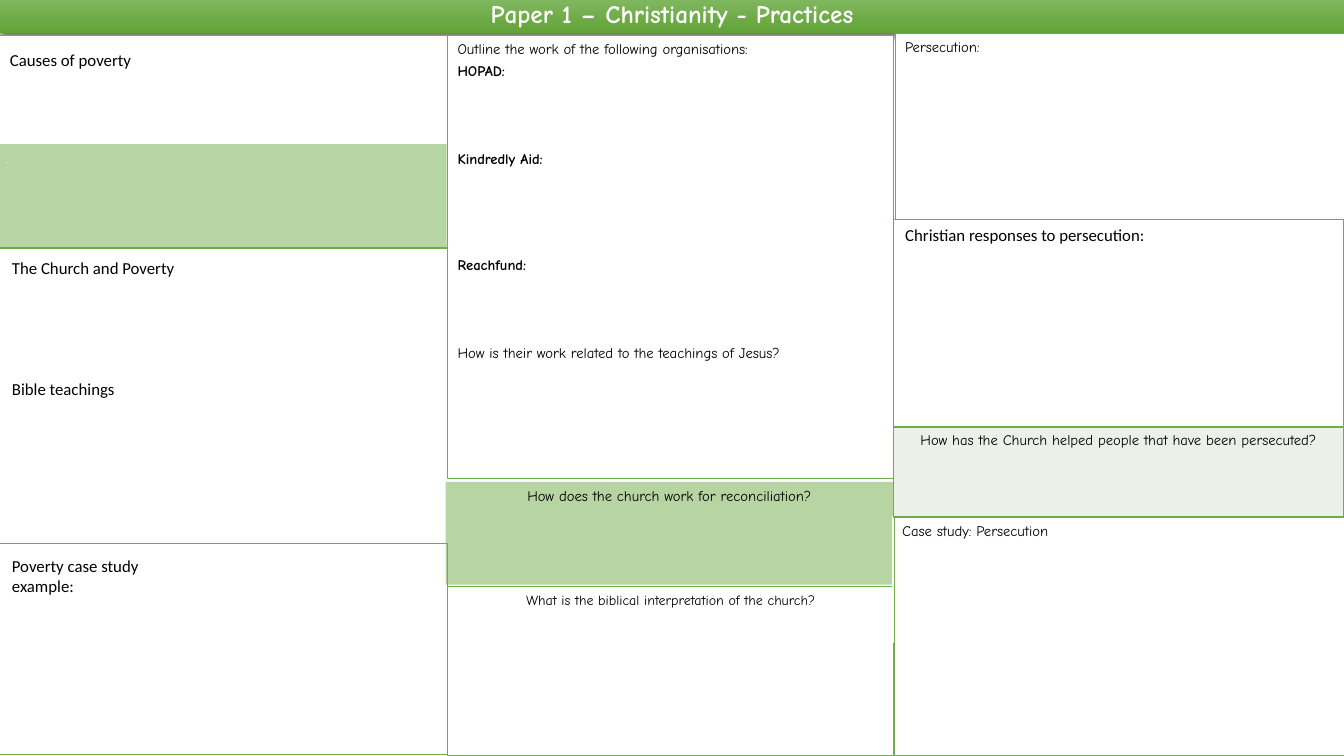
from lxml.etree import SubElement
from pptx import Presentation
from pptx.dml.color import RGBColor
from pptx.enum.shapes import MSO_SHAPE
from pptx.enum.text import MSO_ANCHOR, MSO_AUTO_SIZE, PP_ALIGN
from pptx.oxml import parse_xml
from pptx.oxml.ns import nsdecls, qn
from pptx.util import Inches, Pt

GREEN, WHITE, BLACK, PALE = "70AD47", "FFFFFF", "000000", "EBF1E9"
COMIC, CALIBRI = "Comic Neue", "Calibri"
LINE_PITCH = 12.6  # points per line of 10.5 point Comic Neue


def color(value):
    return RGBColor.from_string(value)


def style(para, text, size=10.5, font=COMIC, ink=BLACK, align=PP_ALIGN.LEFT,
          bold=False, before=0):
    para.text = text
    para.alignment = align
    para.space_before = Pt(before)
    para.font.name = font
    para.font.size = Pt(size)
    para.font.bold = bold
    para.font.color.rgb = color(ink)


def add_panel(page, left, top, width, height, fill=None, line=None, weight=1, alpha=None):
    """Add a rectangle; alpha is the fill's opacity in percent."""
    panel = page.shapes.add_shape(MSO_SHAPE.RECTANGLE, Inches(left), Inches(top),
                                  Inches(width), Inches(height))
    panel.shadow.inherit = False
    if fill:
        panel.fill.solid()
        panel.fill.fore_color.rgb = color(fill)
    else:
        panel.fill.background()
    if alpha:
        solid = panel.fill._xPr.find(qn("a:solidFill"))
        SubElement(solid[0], qn("a:alpha"), val=str(alpha * 1000))
    if line:
        panel.line.color.rgb = color(line)
        panel.line.width = Pt(weight)
    else:
        panel.line.fill.background()
    panel.text_frame.word_wrap = True
    panel.text_frame.vertical_anchor = MSO_ANCHOR.TOP
    return panel


def add_heading(page, left, top, width, height, text):
    box = page.shapes.add_textbox(Inches(left), Inches(top), Inches(width), Inches(height))
    box.text_frame.word_wrap = True
    style(box.text_frame.paragraphs[0], text, 12, CALIBRI)
    return box


def add_title(page, left, top, width, height):
    title = page.shapes.title
    title.left, title.top = Inches(left), Inches(top)
    title.width, title.height = Inches(width), Inches(height)
    title.fill.gradient()
    title.fill.gradient_angle = 270
    for stop, shade in zip(title.fill.gradient_stops, ("81B861", "62A336")):
        stop.color.rgb = color(shade)
    title._element.spPr.append(parse_xml(
        f'<a:effectLst {nsdecls("a")}><a:outerShdw blurRad="57150" dist="19050" dir="5400000">'
        '<a:srgbClr val="000000"><a:alpha val="63000"/></a:srgbClr></a:outerShdw></a:effectLst>'))
    frame = title.text_frame
    frame.auto_size = MSO_AUTO_SIZE.NONE
    frame.vertical_anchor = MSO_ANCHOR.MIDDLE
    para = frame.paragraphs[0]
    style(para, "Paper 1 – Christianity - Practices", 18, ink=WHITE,
          align=PP_ALIGN.CENTER, bold=True)
    para.line_spacing = 0.9


def add_poverty_column(page, left, top, width):
    add_panel(page, left - 0.02, top, width + 0.02, 2.11, WHITE, GREEN)
    band = add_panel(page, left - 0.03, top + 1.08, width + 0.02, 1.04, GREEN, alpha=50)
    style(band.text_frame.paragraphs[0], ".", ink=WHITE)
    add_panel(page, left, top + 5.04, width, 2.1, line=GREEN, weight=0.75)
    add_heading(page, left, top + 0.09, width - 0.2, 0.3, "Causes of poverty")
    church = add_heading(page, left + 0.02, top + 2.16, width - 0.02, 1.51,
                         "The Church and Poverty")
    style(church.text_frame.add_paragraph(), "Bible teachings", 12, CALIBRI, before=72)
    add_heading(page, left + 0.02, top + 5.11, 1.9, 0.5, "Poverty case study example:")


def add_organisations_column(page, left, top, width):
    interpretation = add_panel(page, left, top + 5.47, width, 1.68, WHITE, GREEN)
    style(interpretation.text_frame.paragraphs[0],
          "What is the biblical interpretation of the church?", 10, align=PP_ALIGN.CENTER)
    reconciliation = add_panel(page, left - 0.02, top + 4.43, width + 0.02, 1.02, GREEN, alpha=50)
    style(reconciliation.text_frame.paragraphs[0],
          "How does the church work for reconciliation?", align=PP_ALIGN.CENTER)
    frame = add_panel(page, left, top, width, 4.4, WHITE, GREEN).text_frame
    style(frame.paragraphs[0], "Outline the work of the following organisations:")
    for text, bold, gap in (
        ("HOPAD:", True, 0.2),
        ("Kindredly Aid:", True, 4),
        ("Reachfund:", True, 5),
        ("How is their work related to the teachings of Jesus?", False, 4),
    ):
        style(frame.add_paragraph(), text, bold=bold, before=gap * LINE_PITCH)


def add_question_table(page, left, top, width, height, question):
    table = page.shapes.add_table(1, 1, Inches(left), Inches(top),
                                  Inches(width), Inches(height)).table
    cell = table.cell(0, 0)
    style(cell.text_frame.paragraphs[0], question, align=PP_ALIGN.CENTER)
    cell.fill.solid()
    cell.fill.fore_color.rgb = color(PALE)
    properties = cell._tc.get_or_add_tcPr()
    for position, side in enumerate(("lnL", "lnR", "lnT", "lnB")):
        properties.insert(position, parse_xml(
            f'<a:{side} {nsdecls("a")} w="12700"><a:solidFill><a:srgbClr val="{GREEN}"/>'
            f'</a:solidFill></a:{side}>'))


def add_persecution_column(page, left, top, width):
    add_panel(page, left, top + 1.85, width, 2.05, line=GREEN, weight=0.75)
    case_study = add_panel(page, left - 0.01, top + 4.8, 3.4, 1.24, WHITE, WHITE)
    style(case_study.text_frame.paragraphs[0], "Case study: Persecution")
    persecution = add_panel(page, left + 0.02, top, width, 1.85, WHITE, GREEN)
    style(persecution.text_frame.paragraphs[0], "Persecution:")
    add_question_table(page, left, top + 3.91, width, 0.89,
                       "How has the Church helped people that have been persecuted?")
    add_panel(page, left + 0.01, top + 4.79, width, 2.38, line=GREEN, weight=0.75)
    add_heading(page, left + 0.02, top + 1.85, width, 0.3, "Christian responses to persecution:")


def main():
    deck = Presentation()
    deck.slide_width, deck.slide_height = Inches(13.33), Inches(7.5)
    page = deck.slides.add_slide(deck.slide_layouts[5])
    add_title(page, 0, -0.02, 13.33, 0.35)
    add_poverty_column(page, 0, 0.35, 4.44)
    add_organisations_column(page, 4.44, 0.35, 4.42)
    add_persecution_column(page, 8.86, 0.33, 4.47)
    deck.save("out.pptx")


if __name__ == "__main__":
    main()
